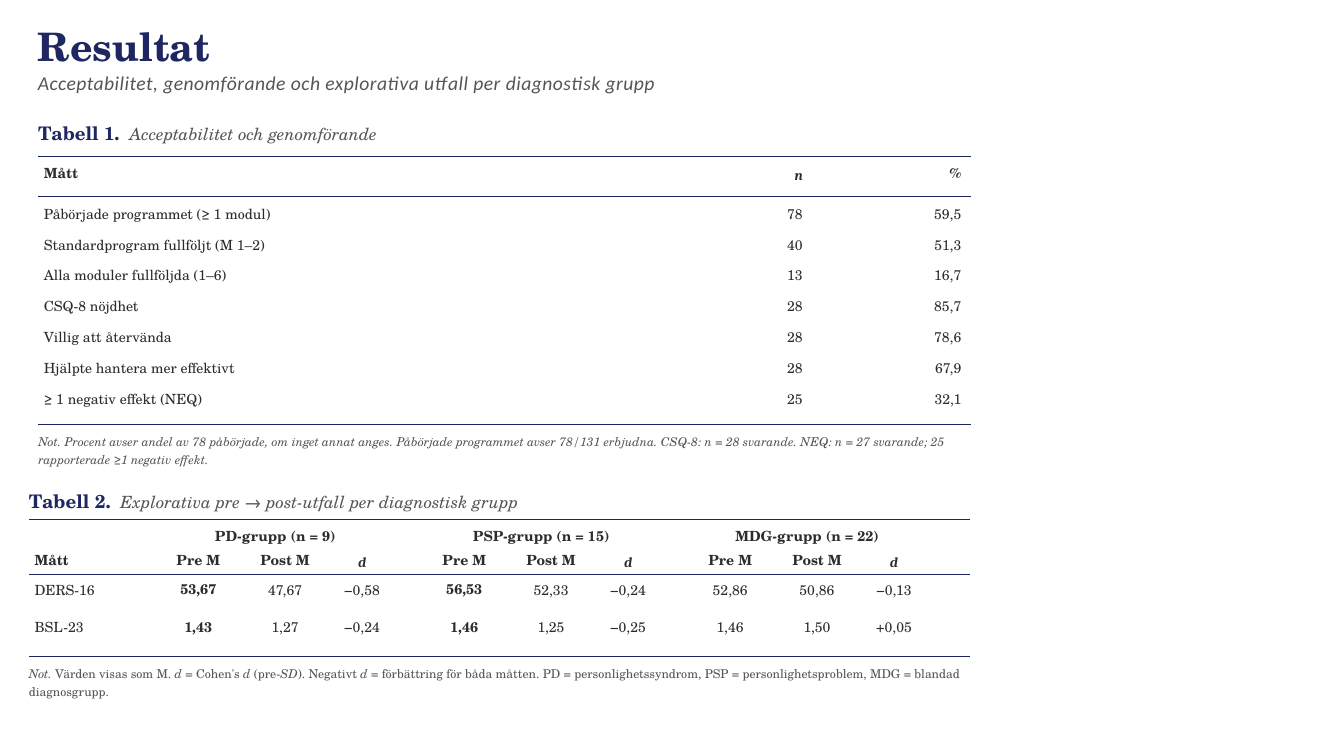
from dataclasses import dataclass, field

import pptx
import pptx.dml.color
import pptx.enum.shapes
import pptx.enum.text
import pptx.oxml
import pptx.oxml.ns
import pptx.util

Pt = pptx.util.Pt
ALIGN = pptx.enum.text.PP_ALIGN
NAVY, GREY, INK = "1E2761", "555555", "2C2C2C"
SERIF = "TeX Gyre Schola"

BODY = {"name": SERIF, "size": Pt(15), "bold": False, "italic": False, "color": INK}
BOLD = BODY | {"bold": True}
SYMBOL = BOLD | {"name": "Cambria", "italic": True}
CAPTION_LABEL = BOLD | {"size": Pt(20), "color": NAVY}
CAPTION_TEXT = BODY | {"size": Pt(18), "italic": True, "color": GREY}
NOTE = BODY | {"size": Pt(13), "color": GREY}
NOTE_ITALIC = NOTE | {"italic": True}
TITLE = BOLD | {"size": Pt(42), "color": NAVY}
SUBTITLE = CAPTION_TEXT | {"name": "Calibri", "size": Pt(21)}

CAPTION_TAB = 98


@dataclass
class Span:
    text: str
    style: dict = field(default_factory=lambda: BODY)


@dataclass
class Row:
    """One table row; top is the space above its text."""
    height: float
    top: float
    line: float
    cells: list[Span]


@dataclass
class Column:
    width: float
    align: ALIGN
    left: float = 0
    right: float = 0


def rgb(color: str) -> pptx.dml.color.RGBColor:
    return pptx.dml.color.RGBColor.from_string(color)


def write(paragraph, spans: list[Span], line: float, align=ALIGN.LEFT) -> None:
    paragraph.alignment = align
    paragraph.line_spacing = Pt(line)
    paragraph.space_before = Pt(0)
    for span in spans:
        run = paragraph.add_run()
        run.text = span.text
        for name, value in span.style.items():
            if name == "color":
                run.font.color.rgb = rgb(value)
            else:
                setattr(run.font, name, value)


def prepare_frame(frame) -> None:
    frame.word_wrap = True
    frame.auto_size = pptx.enum.text.MSO_AUTO_SIZE.NONE
    frame.vertical_anchor = pptx.enum.text.MSO_ANCHOR.TOP
    for side in ("left", "right", "top", "bottom"):
        setattr(frame, f"margin_{side}", 0)


def add_text(slide, left: float, top: float, width: float, height: float,
             spans: list[Span], line: float):
    shape = slide.shapes.add_textbox(Pt(left), Pt(top), Pt(width), Pt(height))
    prepare_frame(shape.text_frame)
    paragraph = shape.text_frame.paragraphs[0]
    write(paragraph, spans, line)
    return paragraph


def add_caption(slide, left: float, top: float, label: str, text: str) -> None:
    spans = [Span(f"{label}\t", CAPTION_LABEL), Span(text, CAPTION_TEXT)]
    paragraph = add_text(slide, left, top, 1000, 24, spans, 24)
    paragraph._p.get_or_add_pPr().append(pptx.oxml.parse_xml(
        f'<a:tabLst {pptx.oxml.ns.nsdecls("a")}>'
        f'<a:tab pos="{Pt(CAPTION_TAB)}" algn="l"/></a:tabLst>'))


def add_rule(slide, left: float, top: float, width: float, weight: float) -> None:
    rule = slide.shapes.add_connector(
        pptx.enum.shapes.MSO_CONNECTOR.STRAIGHT,
        Pt(left), Pt(top), Pt(left + width), Pt(top))
    rule.line.color.rgb = rgb(NAVY)
    rule.line.width = Pt(weight)
    rule._element.spPr.append(pptx.oxml.parse_xml(
        f'<a:effectLst {pptx.oxml.ns.nsdecls("a")}/>'))


def add_table(slide, left: float, top: float, columns: list[Column], rows: list[Row]):
    width = sum(column.width for column in columns)
    height = sum(row.height for row in rows)
    table = slide.shapes.add_table(
        len(rows), len(columns), Pt(left), Pt(top), Pt(width), Pt(height)).table
    table.first_row = table.horz_banding = False
    for index, column in enumerate(columns):
        table.columns[index].width = Pt(column.width)
    for row_index, row in enumerate(rows):
        table.rows[row_index].height = Pt(row.height)
        for column_index, (column, span) in enumerate(zip(columns, row.cells)):
            cell = table.cell(row_index, column_index)
            cell.fill.background()
            cell.margin_left, cell.margin_right = Pt(column.left), Pt(column.right)
            cell.margin_top, cell.margin_bottom = Pt(row.top), 0
            write(cell.text_frame.paragraphs[0], [span], row.line, column.align)
    return table


def add_title(slide) -> None:
    title = slide.shapes.title
    title.left, title.top, title.width, title.height = Pt(40.5), Pt(29), Pt(968), Pt(72)
    frame = title.text_frame
    prepare_frame(frame)
    write(frame.paragraphs[0], [Span("Resultat", TITLE)], 45.4)
    subtitle = frame.add_paragraph()
    write(subtitle, [Span(
        "Acceptabilitet, genomförande och explorativa utfall per diagnostisk grupp",
        SUBTITLE)], 27)
    subtitle.runs[0]._r.get_or_add_rPr().set("spc", "50")


def add_acceptability(slide) -> None:
    left, top, width = 41, 168, 999
    measures = [
        ("Påbörjade programmet (≥ 1 modul)", "78", "59,5"),
        ("Standardprogram fullföljt (M 1–2)", "40", "51,3"),
        ("Alla moduler fullföljda (1–6)", "13", "16,7"),
        ("CSQ-8 nöjdhet", "28", "85,7"),
        ("Villig att återvända", "28", "78,6"),
        ("Hjälpte hantera mer effektivt", "28", "67,9"),
        ("≥ 1 negativ effekt (NEQ)", "25", "32,1"),
    ]
    columns = [Column(712, ALIGN.LEFT, left=6),
               Column(117, ALIGN.RIGHT, right=10),
               Column(170, ALIGN.RIGHT, right=10)]
    rows = [Row(42, 10, 19, [Span("Mått", BOLD), Span("n", SYMBOL), Span("%", BOLD)])]
    rows += [Row(33, 10, 20, [Span(text) for text in measure]) for measure in measures]
    add_caption(slide, left, 130.3, "Tabell 1.", "Acceptabilitet och genomförande")
    add_table(slide, left, top, columns, rows)
    for rule_top, weight in ((top, 1.25), (210, 0.75), (455, 1.25)):
        add_rule(slide, left, rule_top, width, weight)
    add_text(slide, left, 463, width, 37, [Span(
        "Not. Procent avser andel av 78 påbörjade, om inget annat anges. Påbörjade "
        "programmet avser 78/131 erbjudna. CSQ-8: n = 28 svarande. NEQ: n = 27 svarande; "
        "25 rapporterade ≥1 negativ effekt.", NOTE_ITALIC)], 18.5)


def add_outcomes(slide) -> None:
    left, top, width = 31, 557, 1008
    groups = ["PD-grupp (n = 9)", "PSP-grupp (n = 15)", "MDG-grupp (n = 22)"]
    outcomes = [
        ("DERS-16", "53,67", "47,67", "−0,58", "56,53", "52,33", "−0,24",
         "52,86", "50,86", "−0,13"),
        ("BSL-23", "1,43", "1,27", "−0,24", "1,46", "1,25", "−0,25",
         "1,46", "1,50", "+0,05"),
    ]
    bold_columns = (1, 4)
    group_gap = 27
    group_columns = [Column(93, ALIGN.CENTER), Column(93, ALIGN.CENTER),
                     Column(72 + group_gap, ALIGN.CENTER, right=group_gap)]
    columns = [Column(135, ALIGN.LEFT, left=6)] + group_columns * len(groups)
    group_cells = [Span("")]
    for group in groups:
        group_cells += [Span(group, BOLD), Span(""), Span("")]
    headings = [Span("Pre M", BOLD), Span("Post M", BOLD), Span("d", SYMBOL)]
    rows = [Row(31, 10, 19, group_cells),
            Row(27, 5, 19, [Span("Mått", BOLD)] + headings * len(groups))]
    for height, outcome in zip((40, 48), outcomes):
        rows.append(Row(height, 8, 20, [
            Span(text, BOLD if index in bold_columns else BODY)
            for index, text in enumerate(outcome)]))

    add_caption(slide, left, 525, "Tabell 2.",
                "Explorativa pre → post-utfall per diagnostisk grupp")
    table = add_table(slide, left, top, columns, rows)
    for first in range(1, len(columns), len(group_columns)):
        heading = table.cell(0, first)
        heading.merge(table.cell(0, first + len(group_columns) - 1))
        heading.margin_right = Pt(group_gap)
    for rule_top, weight in ((top, 1), (615, 0.5), (703, 1)):
        add_rule(slide, left, rule_top, width, weight)
    note = ["Not. ", "Värden visas som M. ", "d", " = Cohen's ", "d", " (pre-", "SD",
            "). Negativt ", "d", " = förbättring för båda måtten. PD = "
            "personlighetssyndrom, PSP = personlighetsproblem, MDG = blandad diagnosgrupp."]
    add_text(slide, left, 711.4, width, 50, [
        Span(text, NOTE if index % 2 else NOTE_ITALIC)
        for index, text in enumerate(note)], 18.5)


def main() -> None:
    presentation = pptx.Presentation()
    presentation.slide_width, presentation.slide_height = Pt(1440), Pt(810)
    title_only = presentation.slide_layouts[5]
    slide = presentation.slides.add_slide(title_only)
    add_title(slide)
    add_acceptability(slide)
    add_outcomes(slide)
    presentation.save("out.pptx")


if __name__ == "__main__":
    main()
